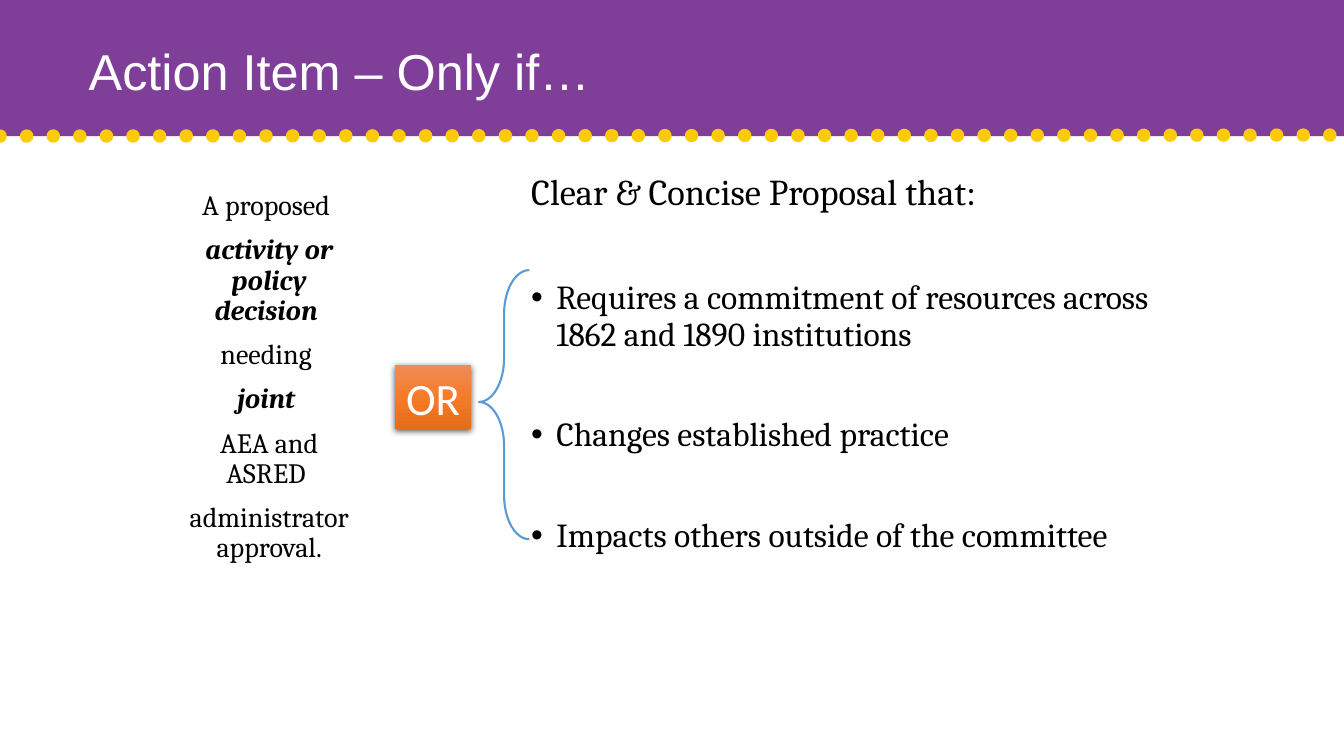
import copy

import lxml.etree
import pptx
import pptx.dml.color
import pptx.enum.dml
import pptx.enum.shapes
import pptx.enum.text
import pptx.oxml
import pptx.oxml.ns
import pptx.util

Inches, Pt = pptx.util.Inches, pptx.util.Pt
SHAPE = pptx.enum.shapes.MSO_SHAPE
ALIGN = pptx.enum.text.PP_ALIGN
ANCHOR = pptx.enum.text.MSO_ANCHOR
FIT = pptx.enum.text.MSO_AUTO_SIZE
qn = pptx.oxml.ns.qn

# Content
TITLE = "Action Item – Only if…"
# text, strong
LEFT = [
    ("A proposed ", False),
    ("activity or policy decision ", True),
    ("needing ", False),
    ("joint ", True),
    ("AEA and ASRED ", False),
    ("administrator approval.", False),
]
# text, size, space before, bullet
RIGHT = [
    ("Clear & Concise Proposal that:", 26, 0, False),
    ("Requires a commitment of resources across 1862 and 1890 institutions", 24, 48, True),
    ("Changes established practice", 24, 46, True),
    ("Impacts others outside of the committee", 24, 46, True),
]
COLORS = {"band": "7F3F98", "dots": "FCCB05", "brace": "5B9BD5",
          "text": "000000", "white": "FFFFFF"}
GLOW = [(0, "F18C57"), (0.5, "F67B28"), (1, "E56C19")]
WIDE, HIGH, BAND = 13.33, 7.5, 1.35


def rgb(code):
    return pptx.dml.color.RGBColor.from_string(code)


def style(para, face, size, color, align=ALIGN.LEFT, space=0):
    para.alignment = align
    para.space_before = Pt(space)
    font = para.font
    font.name, font.size, font.color.rgb = face, Pt(size), rgb(color)


def add_box(slide, *place):
    frame = slide.shapes.add_textbox(*map(Inches, place)).text_frame
    frame.word_wrap = True
    return frame


def add_para(frame, index, text):
    para = frame.paragraphs[0] if index == 0 else frame.add_paragraph()
    para.text = text
    para.line_spacing = 0.9
    return para


def add_shape(slide, kind, *place):
    shape = slide.shapes.add_shape(kind, *map(Inches, place))
    shape.shadow.inherit = False
    return shape


deck = pptx.Presentation()
deck.slide_width, deck.slide_height = Inches(WIDE), Inches(HIGH)
slide = deck.slides.add_slide(deck.slide_layouts[5])
shapes = slide.shapes

# Header band with dotted edge
band = add_shape(slide, SHAPE.RECTANGLE, 0, 0, WIDE, BAND)
band.fill.solid()
band.fill.fore_color.rgb = rgb(COLORS["band"])
band.line.fill.background()

edge = shapes.add_connector(pptx.enum.shapes.MSO_CONNECTOR.STRAIGHT,
                            0, Inches(BAND), Inches(WIDE), Inches(BAND - 0.01))
edge.line.color.rgb = rgb(COLORS["dots"])
edge.line.width = Pt(9.5)
edge.line.dash_style = pptx.enum.dml.MSO_LINE.ROUND_DOT
edge.line._get_or_add_ln().set("cap", "rnd")
lxml.etree.SubElement(edge._element.spPr, qn("a:effectLst"))

# Title, brought in front of the band
title = shapes.title
title.left, title.top, title.width, title.height = map(Inches, (0.78, 0.01, 8.62, 1.45))
shapes._spTree.append(title._element)
title.text_frame.vertical_anchor = ANCHOR.MIDDLE
style(add_para(title.text_frame, 0, TITLE), "Arial", 36, COLORS["white"])

# Left column
frame = add_box(slide, 1.67, 1.85, 2, 4.03)
for i, (text, strong) in enumerate(LEFT):
    para = add_para(frame, i, text)
    style(para, "Cambria", 20, COLORS["text"], ALIGN.CENTER, 10 if i else 0)
    para.font.bold = para.font.italic = strong

# Right column
frame = add_box(slide, 5.17, 1.68, 6.5, 4.2)
for i, (text, size, space, bullet) in enumerate(RIGHT):
    para = add_para(frame, i, text)
    props = para._p.get_or_add_pPr()
    props.set("marL", str(Inches(0.25)))
    props.set("indent", str(-Inches(0.25)))
    if bullet:
        lxml.etree.SubElement(props, qn("a:buFont")).set("typeface", "Arial")
        lxml.etree.SubElement(props, qn("a:buChar")).set("char", "•")
    style(para, "Cambria", size, COLORS["text"], space=space)

# OR tile with gradient and soft shadow
tile = add_shape(slide, SHAPE.RECTANGLE, 3.92, 3.62, 0.75, 0.64)
tile.line.fill.background()
tile.fill.gradient()
tile.fill.gradient_angle = 270
stops = tile._element.spPr.find(".//" + qn("a:gsLst"))
stops.append(copy.deepcopy(stops[0]))
for stop, (spot, code) in zip(tile.fill.gradient_stops, GLOW):
    stop.position = spot
    stop.color.rgb = rgb(code)
tile._element.spPr.find(qn("a:effectLst")).append(pptx.oxml.parse_xml(
    f'<a:outerShdw {pptx.oxml.ns.nsdecls("a")} blurRad="{Pt(4.5)}" dist="{Pt(1.5)}" '
    'dir="5400000" algn="ctr" rotWithShape="0"><a:srgbClr val="000000">'
    '<a:alpha val="63000"/></a:srgbClr></a:outerShdw>'))
frame = tile.text_frame
frame.word_wrap = False
frame.auto_size = FIT.SHAPE_TO_FIT_TEXT
frame.vertical_anchor = ANCHOR.MIDDLE
frame.text = "OR"
style(frame.paragraphs[0], "Calibri", 32, COLORS["white"], ALIGN.CENTER)

# Brace
brace = add_shape(slide, SHAPE.LEFT_BRACE, 4.75, 2.68, 0.5, 2.67)
brace.adjustments[0], brace.adjustments[1] = 0.87, 0.49
brace.fill.background()
brace.line.color.rgb = rgb(COLORS["brace"])
brace.line.width = Pt(1.5)

deck.save("out.pptx")
